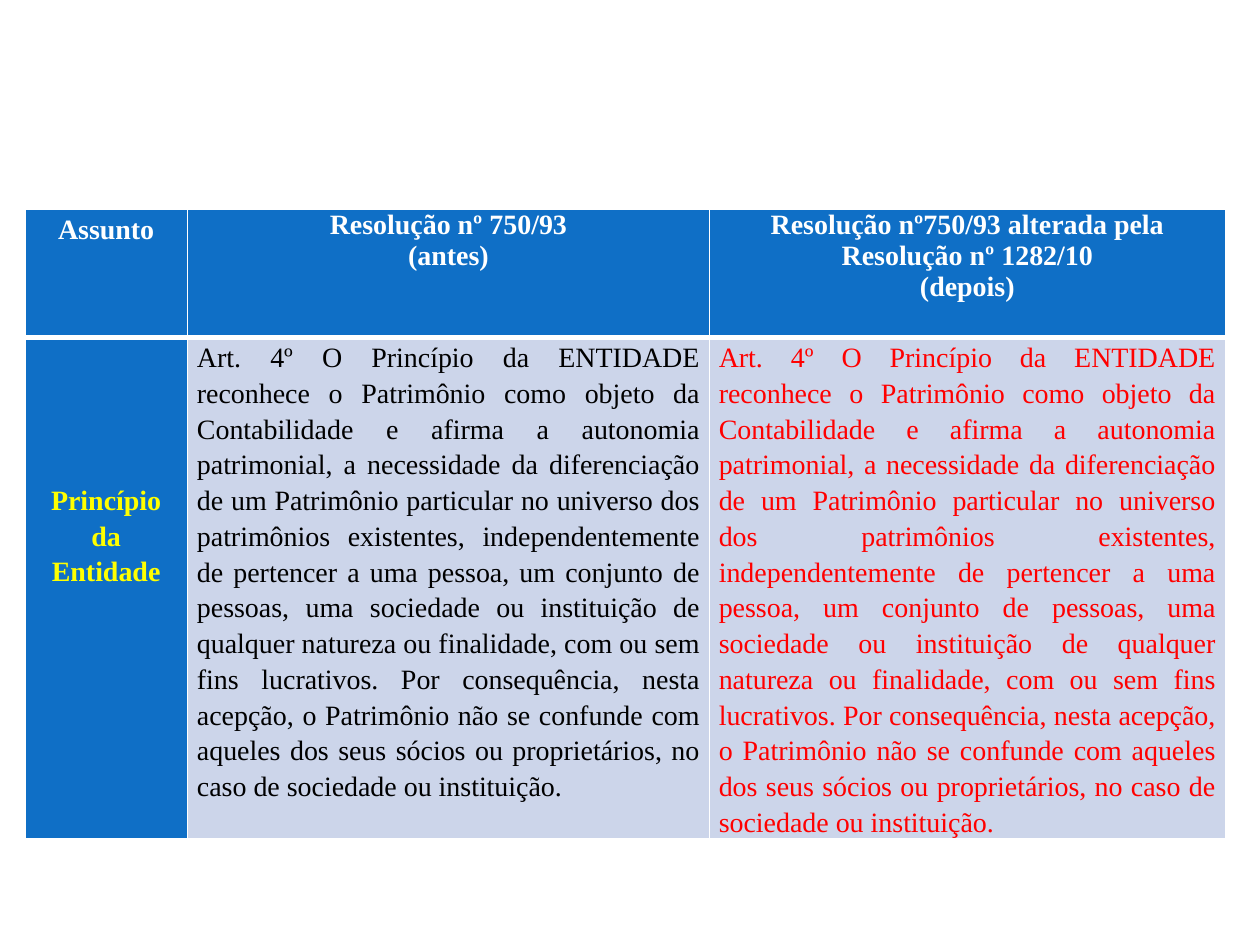
from dataclasses import dataclass

from lxml import etree
from pptx import Presentation
from pptx import util as u
from pptx.dml.color import RGBColor
from pptx.enum import text
from pptx.oxml import ns


@dataclass(frozen=True)
class Theme:
    font: str = "Times New Roman"
    size: int = 16
    blue: str = "0F6FC6"
    pale: str = "CCD5EA"
    white: str = "FFFFFF"
    yellow: str = "FFFF00"
    black: str = "000000"
    red: str = "FF0000"
    thin: int = 1
    thick: int = 3
    loose: float = 1.15


@dataclass(frozen=True)
class CellText:
    paragraphs: tuple
    color: str
    fill: str
    bold: bool = True
    align: text.PP_ALIGN = text.PP_ALIGN.CENTER
    spacing: float = 1.0
    top: float = 0


class SlideBuilder:
    def __init__(self, presentation, theme):
        self.theme = theme
        self.slide = presentation.slides.add_slide(presentation.slide_layouts[6])

    def add_table(self, left, top, widths, heights, rows):
        table = self.slide.shapes.add_table(
            len(rows), len(widths), u.Cm(left), u.Cm(top),
            u.Cm(sum(widths)), u.Cm(sum(heights))).table
        for column, width in zip(table.columns, widths):
            column.width = u.Cm(width)
        for row, height in zip(table.rows, heights):
            row.height = u.Cm(height)
        for row_index, row in enumerate(rows):
            for column_index, content in enumerate(row):
                self.fill_cell(table.cell(row_index, column_index), content, row_index == 0)

    def fill_cell(self, cell, content, is_header):
        thin, thick = self.theme.thin, self.theme.thick
        top, bottom = (thin, thick) if is_header else (thick, thin)
        for side, width in (("lnL", thin), ("lnR", thin), ("lnT", top), ("lnB", bottom)):
            self.add_border(cell, side, width)
        cell.fill.solid()
        cell.fill.fore_color.rgb = RGBColor.from_string(content.fill)
        cell.margin_left = cell.margin_right = u.Cm(0.19)
        cell.margin_top, cell.margin_bottom = u.Cm(content.top), 0
        frame = cell.text_frame
        for index, words in enumerate(content.paragraphs):
            paragraph = frame.add_paragraph() if index else frame.paragraphs[0]
            paragraph.alignment = content.align
            paragraph.line_spacing = content.spacing
            self.add_run(paragraph, words, content)

    def add_run(self, paragraph, words, content):
        run = paragraph.add_run()
        run.text = words
        run.font.name = self.theme.font
        run.font.size = u.Pt(self.theme.size)
        run.font.bold = content.bold
        run.font.color.rgb = RGBColor.from_string(content.color)

    def add_border(self, cell, side, width):
        properties = cell._tc.get_or_add_tcPr()
        line = etree.SubElement(properties, ns.qn("a:" + side), w=str(u.Pt(width)))
        fill = etree.SubElement(line, ns.qn("a:solidFill"))
        etree.SubElement(fill, ns.qn("a:srgbClr"), val=self.theme.white)


ARTICLE = (
    "Art. 4º O Princípio da ENTIDADE reconhece o Patrimônio como objeto da "
    "Contabilidade e afirma a autonomia patrimonial, a necessidade da "
    "diferenciação de um Patrimônio particular no universo dos patrimônios "
    "existentes, independentemente de pertencer a uma pessoa, um conjunto de "
    "pessoas, uma sociedade ou instituição de qualquer natureza ou finalidade, "
    "com ou sem fins lucrativos. Por consequência, nesta acepção, o Patrimônio "
    "não se confunde com aqueles dos seus sócios ou proprietários, no caso de "
    "sociedade ou instituição."
)


def main():
    theme = Theme()
    presentation = Presentation()
    presentation.slide_width, presentation.slide_height = u.Cm(25.4), u.Cm(19.05)

    def header(*paragraphs, spacing=1.0):
        return CellText(paragraphs, theme.white, theme.blue, spacing=spacing)

    def article(color):
        return CellText((ARTICLE,), color, theme.pale, bold=False,
                        align=text.PP_ALIGN.JUSTIFY, spacing=theme.loose)

    subject = CellText(("Princípio da", "Entidade"), theme.yellow, theme.blue,
                       spacing=theme.loose, top=2.88)
    rows = [
        [header("Assunto", spacing=theme.loose),
         header("Resolução nº 750/93", "(antes)"),
         header("Resolução nº750/93 alterada pela", "Resolução nº 1282/10", "(depois)")],
        [subject, article(theme.black), article(theme.red)],
    ]
    builder = SlideBuilder(presentation, theme)
    builder.add_table(0.5, 4.22, [3.28, 10.52, 10.4], [2.59, 10.08], rows)
    presentation.save("out.pptx")


if __name__ == "__main__":
    main()
